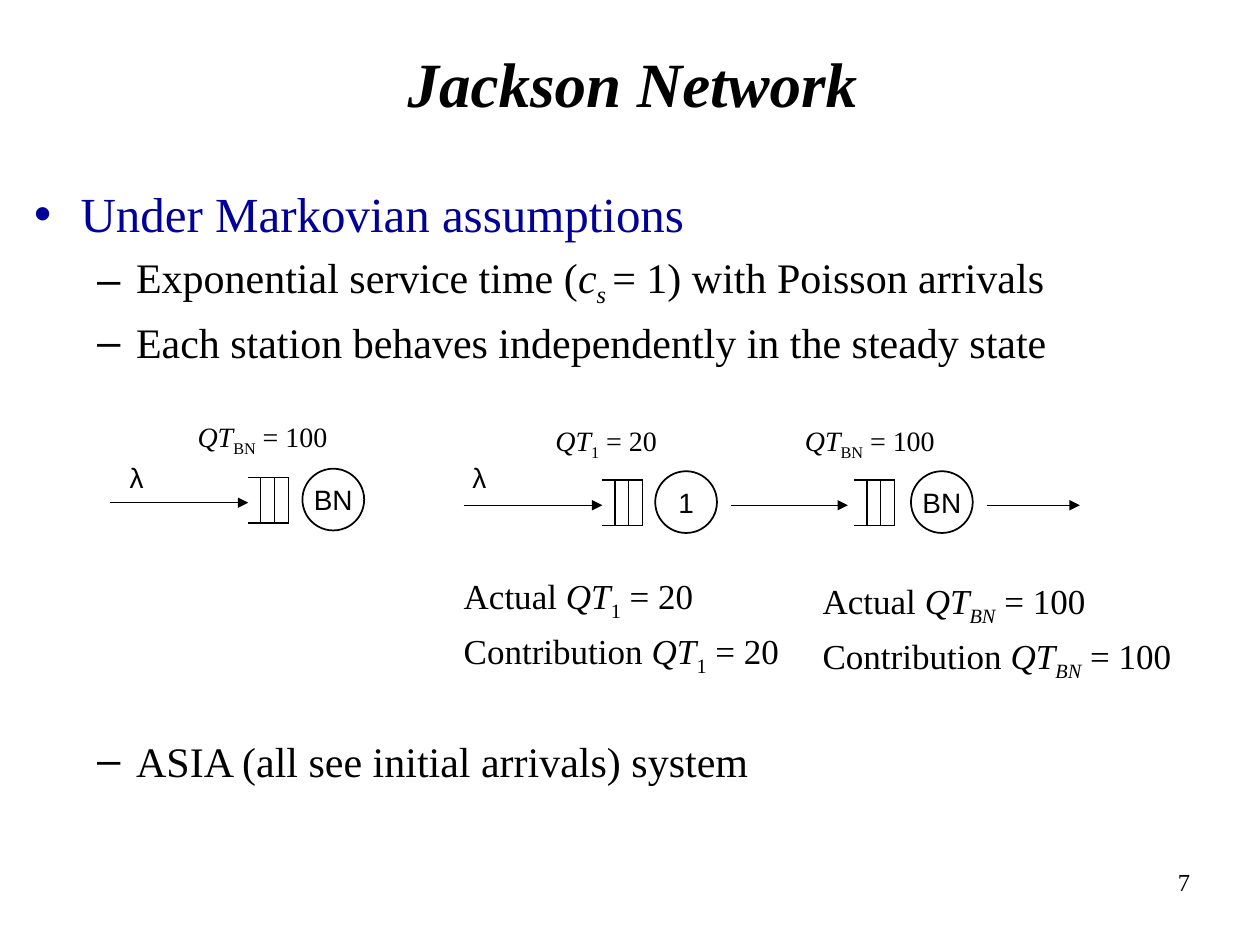
from lxml.etree import SubElement
from pptx import Presentation
from pptx.dml.color import RGBColor
from pptx.enum.shapes import MSO_CONNECTOR, MSO_SHAPE
from pptx.enum.text import MSO_ANCHOR, MSO_AUTO_SIZE, PP_ALIGN
from pptx.oxml.ns import qn
from pptx.util import Inches, Pt

BLACK = RGBColor(0, 0, 0)
NAVY = RGBColor(0, 0, 0x99)
SERIF, SANS = "Times New Roman", "Arial"

deck = Presentation()
deck.slide_width, deck.slide_height = Inches(10), Inches(7.5)
COL, ROW = deck.slide_width // 1000, deck.slide_height // 750
slide = deck.slides.add_slide(deck.slide_layouts[1])
shapes = slide.shapes


def write(paragraph, pieces, size, face=SERIF, color=BLACK):
    for words, style in pieces:
        run = paragraph.add_run()
        run.text = words
        run.font.name, run.font.size = face, Pt(size)
        run.font.color.rgb = color
        run.font.italic = "i" in style
        run.font.bold = "b" in style
        if "s" in style:
            run.font._element.set("baseline", "-25000")


def draw_line(x1, y1, x2, y2, arrow=False):
    line = shapes.add_connector(
        MSO_CONNECTOR.STRAIGHT, x1 * COL, y1 * ROW, x2 * COL, y2 * ROW)
    line.line.color.rgb = BLACK
    line.line.width = Pt(0.75)
    if arrow:
        SubElement(line.line._get_or_add_ln(), qn("a:tailEnd"), type="triangle")
    SubElement(line._element.spPr, qn("a:effectLst"))


title = shapes.title
title.left, title.top, title.width, title.height = 4 * COL, 3 * ROW, 996 * COL, 125 * ROW
title.text_frame.vertical_anchor = MSO_ANCHOR.MIDDLE
heading = title.text_frame.paragraphs[0]
heading.alignment = PP_ALIGN.CENTER
write(heading, [("Jackson Network", "bi")], 36)

body = slide.placeholders[1]
body.left, body.top, body.width, body.height = 17 * COL, 141 * ROW, 962 * COL, 525 * ROW
body.text_frame.auto_size = MSO_AUTO_SIZE.NONE
body.text_frame.margin_top = 5 * ROW

QT, SUB_ONE, SUB_BN = ("QT", "i"), ("1", "s"), ("BN", "is")
MEASURES = ("Actual ", "Contribution ")
first_station = [[(measure, ""), QT, SUB_ONE, (" = 20", "")] for measure in MEASURES]
bottleneck = [[(measure, ""), QT, SUB_BN, (" = 100", "")] for measure in MEASURES]
MEASURE_GAP = 4.3
outline = [
    (0, "•", 28, 0, NAVY, [("Under Markovian assumptions", "")]),
    (1, "–", 24, 4.8, BLACK, [("Exponential service time (", ""), ("c", "i"), ("s ", "is"),
                              ("= 1) with Poisson arrivals", "")]),
    (1, "–", 24, 4.8, BLACK, [("Each station behaves independently in the steady state", "")]),
    (2, None, 20, 118.3, BLACK, first_station[0]),
    (2, None, 20, MEASURE_GAP, BLACK, first_station[1]),
    (1, "–", 24, 33, BLACK, [("ASIA (all see initial arrivals) system", "")]),
]
INDENTS = {0: (37, -37), 1: (81, -31), 2: (341, 0)}
for row, (level, bullet, size, before, color, pieces) in enumerate(outline):
    point = body.text_frame.paragraphs[0] if row == 0 else body.text_frame.add_paragraph()
    point.level = level
    point.space_before = Pt(before)
    layout = point._p.get_or_add_pPr()
    margin, hang = INDENTS[level]
    layout.set("marL", str(margin * COL))
    layout.set("indent", str(hang * COL))
    if bullet:
        SubElement(layout, qn("a:buFont"), typeface=SANS)
        SubElement(layout, qn("a:buChar"), char=bullet)
    else:
        SubElement(layout, qn("a:buNone"))
    write(point, pieces, size, color=color)

bottleneck_column = shapes.add_textbox(643 * COL, 455 * ROW, 310 * COL, 90 * ROW).text_frame
bottleneck_column.word_wrap = True
write(bottleneck_column.paragraphs[0], bottleneck[0], 20)
contribution = bottleneck_column.add_paragraph()
contribution.space_before = Pt(MEASURE_GAP)
write(contribution, bottleneck[1], 20)

stations = [
    ("BN", 87, 197, 197, 240, 399),
    ("1", 368, 478, 478, 520, 401),
    ("BN", 580, 673, 678, 723, 401),
]
for name, start, end, queue, server, axis in stations:
    draw_line(start, axis, end, axis, arrow=True)
    top, bottom = axis - 20, axis + 16
    for rail in (top, bottom):
        draw_line(queue, rail, queue + 32, rail)
    for slot in (10, 21, 32):
        draw_line(queue + slot, top, queue + slot, bottom)
    circle = shapes.add_shape(
        MSO_SHAPE.OVAL, server * COL, (axis - 27) * ROW, 49 * COL, 49 * ROW)
    circle.shadow.inherit = False
    circle.fill.background()
    circle.line.color.rgb = BLACK
    circle.line.width = Pt(1)
    circle.text_frame.word_wrap = False
    circle.text_frame.vertical_anchor = MSO_ANCHOR.MIDDLE
    circle.text_frame.paragraphs[0].alignment = PP_ALIGN.CENTER
    write(circle.text_frame.paragraphs[0], [(name, "")], 16, SANS)
draw_line(783, 401, 857, 401, arrow=True)

bottleneck_time = [QT, ("BN", "s"), (" = 100", "")]
labels = [
    (147, 328, 127, 37, 16, SERIF, bottleneck_time),
    (431, 331, 103, 37, 16, SERIF, [QT, SUB_ONE, (" = 20", "")]),
    (629, 331, 127, 37, 16, SERIF, bottleneck_time),
    (93, 361, 33, 37, 16, SANS, [("λ", "")]),
    (365, 361, 33, 37, 16, SANS, [("λ", "")]),
    (925, 683, 58, 50, 14, SERIF, [("7", "")]),
]
for left, top, width, height, size, face, pieces in labels:
    label = shapes.add_textbox(left * COL, top * ROW, width * COL, height * ROW)
    label.text_frame.word_wrap = size == 14
    write(label.text_frame.paragraphs[0], pieces, size, face)

deck.save("out.pptx")
